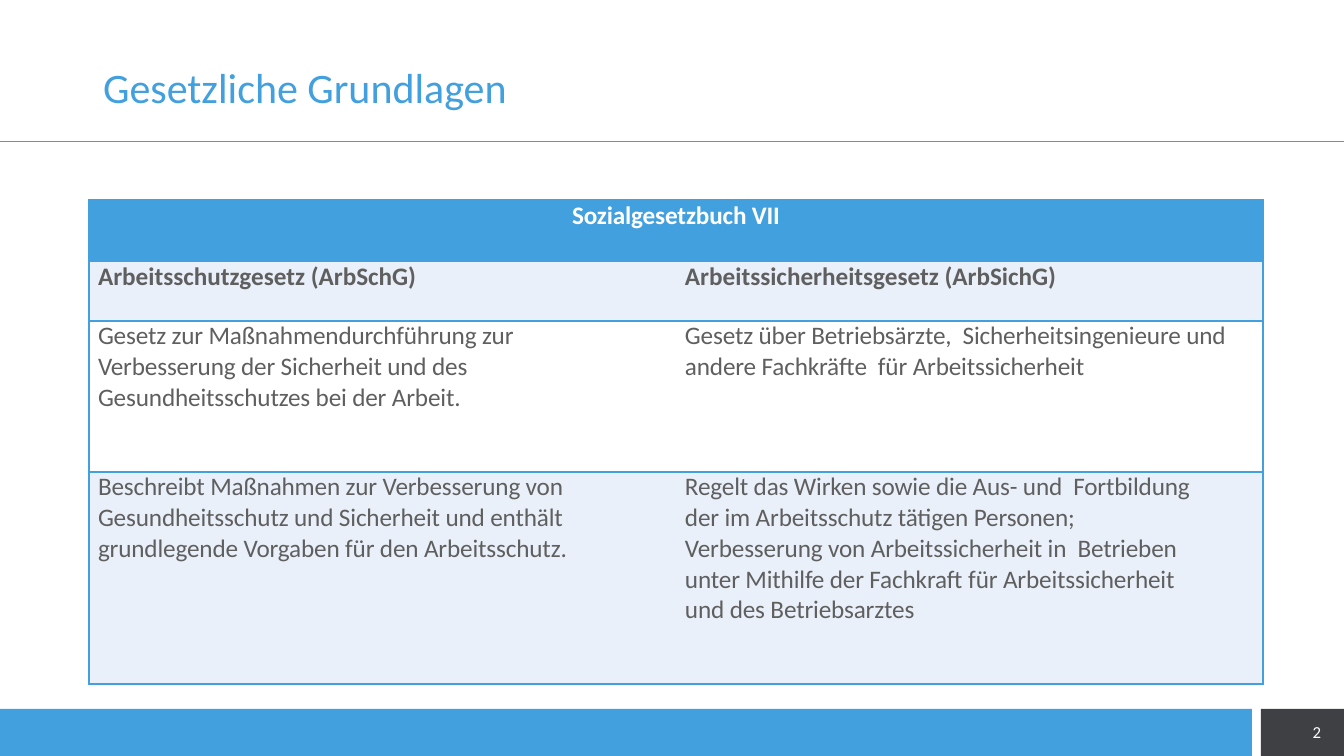
import pptx
import pptx.dml.color
import pptx.enum.shapes
import pptx.enum.text
import pptx.oxml
import pptx.util
from pptx.oxml.ns import nsdecls

SCALE = 914400 / 100.8
BLUE, DARK, GREY, PALE, WHITE = "42A0DE", "3F4044", "5F5F5F", "E9F0F9", "FFFFFF"
ALIGN = pptx.enum.text.PP_ALIGN
MIDDLE = pptx.enum.text.MSO_ANCHOR.MIDDLE

LAW_ROWS = [
    (["Arbeitsschutzgesetz (ArbSchG)"],
     ["Arbeitssicherheitsgesetz (ArbSichG)"]),
    (["Gesetz zur Maßnahmendurchführung zur Verbesserung der Sicherheit und des "
      "Gesundheitsschutzes bei der Arbeit."],
     ["Gesetz über Betriebsärzte,  Sicherheitsingenieure und andere Fachkräfte  "
      "für Arbeitssicherheit"]),
    (["Beschreibt Maßnahmen zur Verbesserung von Gesundheitsschutz und Sicherheit "
      "und enthält grundlegende Vorgaben für den Arbeitsschutz."],
     ["Regelt das Wirken sowie die Aus- und  Fortbildung der im Arbeitsschutz "
      "tätigen Personen;",
      "Verbesserung von Arbeitssicherheit in  Betrieben unter Mithilfe der Fachkraft "
      "für Arbeitssicherheit und des Betriebsarztes"]),
]


def px(length):
    return pptx.util.Emu(round(length * SCALE))


def color(value):
    return pptx.dml.color.RGBColor.from_string(value)


def write(frame, paragraphs, size=18, fill=GREY, bold=False, align=ALIGN.LEFT,
          spacing=None, tracking=0, indent=0, right_indents=()):
    """Fill a text frame; tracking is in hundredths of a point."""
    frame.word_wrap = True
    for index, text in enumerate(paragraphs):
        para = frame.paragraphs[0] if index == 0 else frame.add_paragraph()
        para.alignment = align
        para.line_spacing = spacing
        properties = para._p.get_or_add_pPr()
        if indent:
            properties.set("marL", str(px(indent)))
            properties.set("indent", "0")
        if index < len(right_indents):
            properties.set("marR", str(px(right_indents[index])))
        span = para.add_run()
        span.text = text
        span.font.name = "Calibri"
        span.font.size = pptx.util.Pt(size)
        span.font.bold = bold
        span.font.color.rgb = color(fill)
        if tracking:
            span._r.get_or_add_rPr().set("spc", str(tracking))


def add_bar(page, left, top, width, height, fill):
    bar = page.shapes.add_shape(pptx.enum.shapes.MSO_SHAPE.RECTANGLE,
                                px(left), px(top), px(width), px(height))
    bar.shadow.inherit = False
    bar.fill.solid()
    bar.fill.fore_color.rgb = color(fill)
    bar.line.fill.background()


def add_rule(page, top, width):
    rule = page.shapes.add_connector(pptx.enum.shapes.MSO_CONNECTOR.STRAIGHT,
                                     0, px(top), px(width), px(top))
    rule.line.color.rgb = color(BLUE)
    rule.line.width = pptx.util.Pt(0.5)
    rule._element.spPr.append(
        pptx.oxml.parse_xml(f"<a:effectLst {nsdecls('a')}/>"))


def style_cell(cell, fill, visible_sides):
    """Set margins, fill and borders; sides are the letters L, R, T and B."""
    cell.margin_left = cell.margin_right = cell.margin_top = cell.margin_bottom = 0
    cell.fill.solid()
    cell.fill.fore_color.rgb = color(fill)
    properties = cell._tc.get_or_add_tcPr()
    for index, side in enumerate("LRTB"):
        paint = "<a:noFill/>"
        if side in visible_sides:
            paint = f'<a:solidFill><a:srgbClr val="{BLUE}"/></a:solidFill>'
        properties.insert(index, pptx.oxml.parse_xml(
            f'<a:ln{side} {nsdecls("a")} w="12700">{paint}</a:ln{side}>'))


def add_law_table(page):
    widths, heights = (582, 592), (61, 60, 151, 212)
    table = page.shapes.add_table(len(heights), len(widths), px(89), px(200),
                                  px(sum(widths)), px(sum(heights))).table
    for column, width in zip(table.columns, widths):
        column.width = px(width)
    for row, height in zip(table.rows, heights):
        row.height = px(height)

    header = table.cell(0, 0)
    header.merge(table.cell(0, 1))
    for column in range(2):
        style_cell(table.cell(0, column), BLUE, "LRTB")
    write(header.text_frame, ["Sozialgesetzbuch VII"], fill=WHITE, bold=True,
          align=ALIGN.CENTER, tracking=-10)

    for row, laws in enumerate(LAW_ROWS, start=1):
        for column, paragraphs in enumerate(laws):
            cell = table.cell(row, column)
            style_cell(cell, WHITE if row == 2 else PALE, "LR"[column] + "TB")
            write(cell.text_frame, paragraphs, bold=row == 1,
                  tracking=0 if row == 1 else -10, indent=(9, 14)[column],
                  right_indents=(45,) if column == 0 or row == 3 else ())


def main():
    deck = pptx.Presentation()
    deck.slide_width, deck.slide_height = px(1344), px(756)
    page = deck.slides.add_slide(deck.slide_layouts[5])

    add_bar(page, 1261, 709, 83, 47, DARK)
    add_bar(page, 0, 709, 1252, 47, BLUE)
    add_rule(page, 141, 1344)

    title = page.shapes.title
    title.left, title.top, title.width, title.height = px(93), px(40), px(1159), px(99)
    title.text_frame.vertical_anchor = MIDDLE
    write(title.text_frame, ["Gesetzliche Grundlagen"], size=30, fill=BLUE, spacing=0.9)

    add_law_table(page)

    number = page.shapes.add_textbox(px(1274), px(712), px(57), px(40))
    number.text_frame.vertical_anchor = MIDDLE
    write(number.text_frame, ["2"], size=12, fill=WHITE, align=ALIGN.RIGHT)
    deck.save("out.pptx")


if __name__ == "__main__":
    main()
